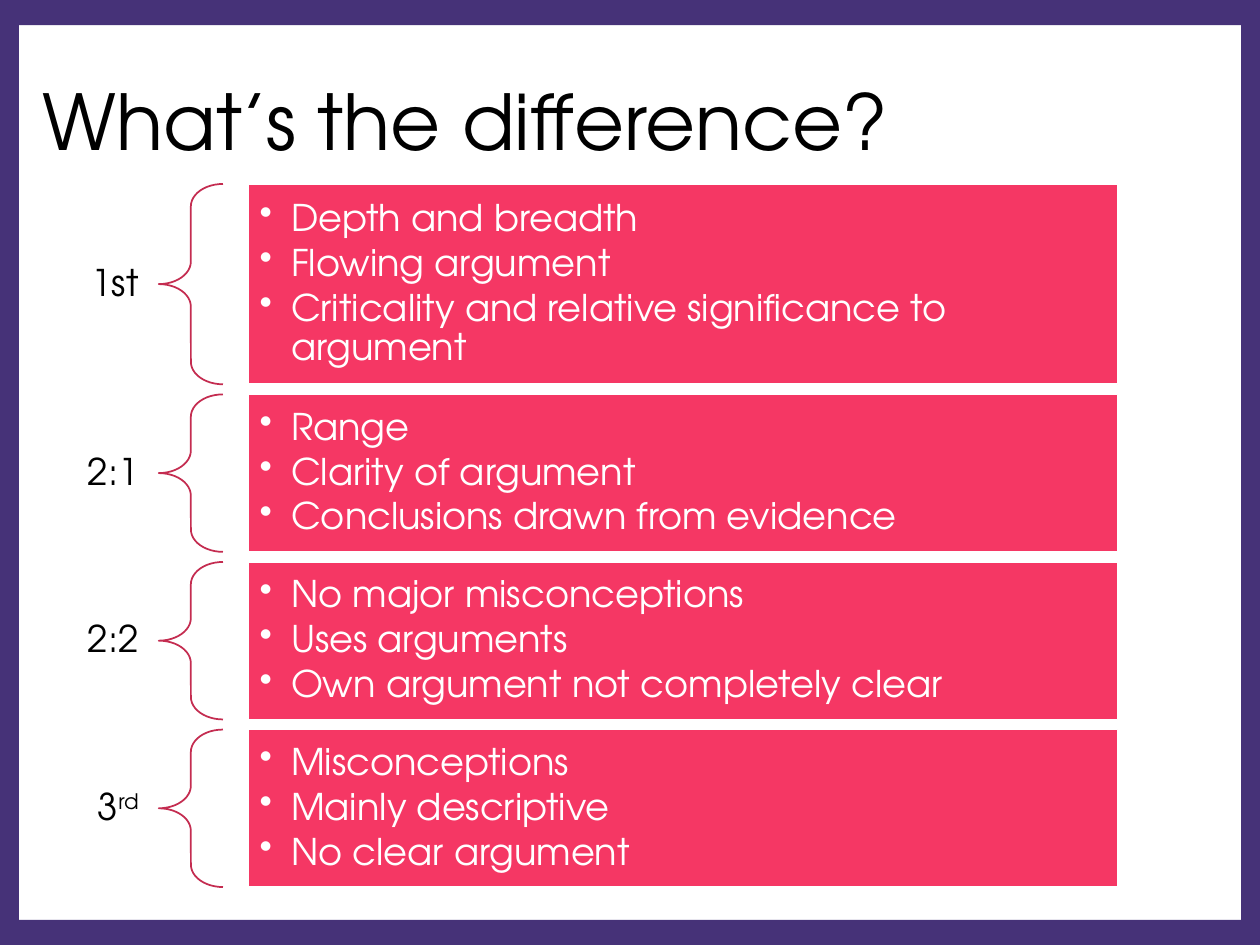
"""Build a slide that compares what earns each degree class."""
from dataclasses import dataclass

from lxml import etree
from pptx import Presentation, dml, util as u
from pptx.dml.color import RGBColor
from pptx.enum import shapes, text
from pptx.oxml import ns

HEADING = "What’s the difference?"
GRADES = [
    (("1st", ""), 1.59, ["Depth and breadth", "Flowing argument",
                         "Criticality and relative significance to argument"]),
    (("2:1", ""), 1.25, ["Range", "Clarity of argument",
                         "Conclusions drawn from evidence"]),
    (("2:2", ""), 1.25, ["No major misconceptions", "Uses arguments",
                         "Own argument not completely clear"]),
    (("3", "rd"), 1.25, ["Misconceptions", "Mainly descriptive",
                         "No clear argument"]),
]


@dataclass(frozen=True)
class Theme:
    font: str = "TeX Gyre Adventor"
    heading_size: int = 44
    body_size: int = 21
    ink: str = "000000"
    paper: str = "FFFFFF"
    border: str = "463278"
    panel: str = "F53764"
    brace: str = "C42C50"


THEME = Theme()
WIDTH, HEIGHT = 10, 7.5
SIDE, EDGE = 0.15, 0.2
LABEL_WIDTH, LABEL_HEIGHT = 1.26, 0.45
BRACE_WIDTH, PANEL_LEFT, PANEL_WIDTH = 0.51, 1.97, 6.9
FIRST_TOP, GAP = 1.46, 0.08


def set_format(target, values):
    for name, value in values.items():
        setattr(target, name, value)


def add_outline(slide, preset, box, fill=None, line=None):
    outline = slide.shapes.add_shape(preset, *map(u.Inches, box))
    outline.shadow.inherit = False
    for part, color in ((outline.fill, fill), (outline.line.fill, line)):
        if color:
            part.solid()
            part.fore_color.rgb = RGBColor.from_string(color)
        else:
            part.background()
    if line:
        outline.line.width = u.Pt(1)
    return outline


def set_frame(frame, horizontal, vertical):
    set_format(frame, {
        "word_wrap": True, "vertical_anchor": text.MSO_ANCHOR.MIDDLE,
        "margin_left": u.Inches(horizontal), "margin_right": u.Inches(horizontal),
        "margin_top": u.Inches(vertical), "margin_bottom": u.Inches(vertical)})
    return frame


def add_words(paragraph, words, size, color):
    run = paragraph.add_run()
    run.text = words
    set_format(run.font, {"name": THEME.font, "size": u.Pt(size)})
    run.font.color.rgb = RGBColor.from_string(color)
    return run


def add_line(slide, box, margins, align):
    frame = slide.shapes.add_textbox(*map(u.Inches, box)).text_frame
    paragraph = set_frame(frame, *margins).paragraphs[0]
    set_format(paragraph, {"alignment": align, "line_spacing": 0.9})
    return paragraph


def add_bullets(frame, points):
    for index, point in enumerate(points):
        paragraph = frame.paragraphs[0] if index == 0 else frame.add_paragraph()
        properties = paragraph._p.get_or_add_pPr()
        set_format(paragraph, {"level": 1, "alignment": text.PP_ALIGN.LEFT,
                               "line_spacing": 0.9, "space_after": u.Pt(3)})
        properties.set("marL", str(u.Inches(0.25)))
        properties.set("indent", str(-u.Inches(0.25)))
        etree.SubElement(properties, ns.qn("a:buChar"), char="•")
        add_words(paragraph, point, THEME.body_size, THEME.paper)


def add_grade(slide, label, height, points, top):
    label_top = top + (height - LABEL_HEIGHT) / 2
    name = add_line(slide, (0, label_top, LABEL_WIDTH, LABEL_HEIGHT),
                    (0.16, 0.06), text.PP_ALIGN.RIGHT)
    base, raised = label
    add_words(name, base, THEME.body_size, THEME.ink)
    if raised:
        suffix = add_words(name, raised, THEME.body_size, THEME.ink)
        suffix._r.get_or_add_rPr().set("baseline", "30000")
    brace = add_outline(slide, shapes.MSO_SHAPE.LEFT_BRACE,
                        (LABEL_WIDTH, top, BRACE_WIDTH, height), line=THEME.brace)
    brace.adjustments[0] = 0.35
    panel = add_outline(slide, shapes.MSO_SHAPE.RECTANGLE,
                        (PANEL_LEFT, top, PANEL_WIDTH, height),
                        THEME.panel, THEME.paper)
    add_bullets(set_frame(panel.text_frame, 0.09, 0.09), points)


def main():
    deck = Presentation()
    set_format(deck, {"slide_width": u.Inches(WIDTH), "slide_height": u.Inches(HEIGHT)})
    slide = deck.slides.add_slide(deck.slide_layouts[6])
    for border in ((0, 0, SIDE, HEIGHT), (WIDTH - SIDE, 0, SIDE, HEIGHT),
                   (0, 0, WIDTH, EDGE), (0, HEIGHT - EDGE, WIDTH, EDGE)):
        add_outline(slide, shapes.MSO_SHAPE.RECTANGLE, border, THEME.border)
    heading = add_line(slide, (0.24, 0.27, 8.62, 1.45), (0.1, 0.05),
                       text.PP_ALIGN.LEFT)
    add_words(heading, HEADING, THEME.heading_size, THEME.ink)
    top = FIRST_TOP
    for label, height, points in GRADES:
        add_grade(slide, label, height, points, top)
        top += height + GAP
    deck.save("out.pptx")


if __name__ == "__main__":
    main()
